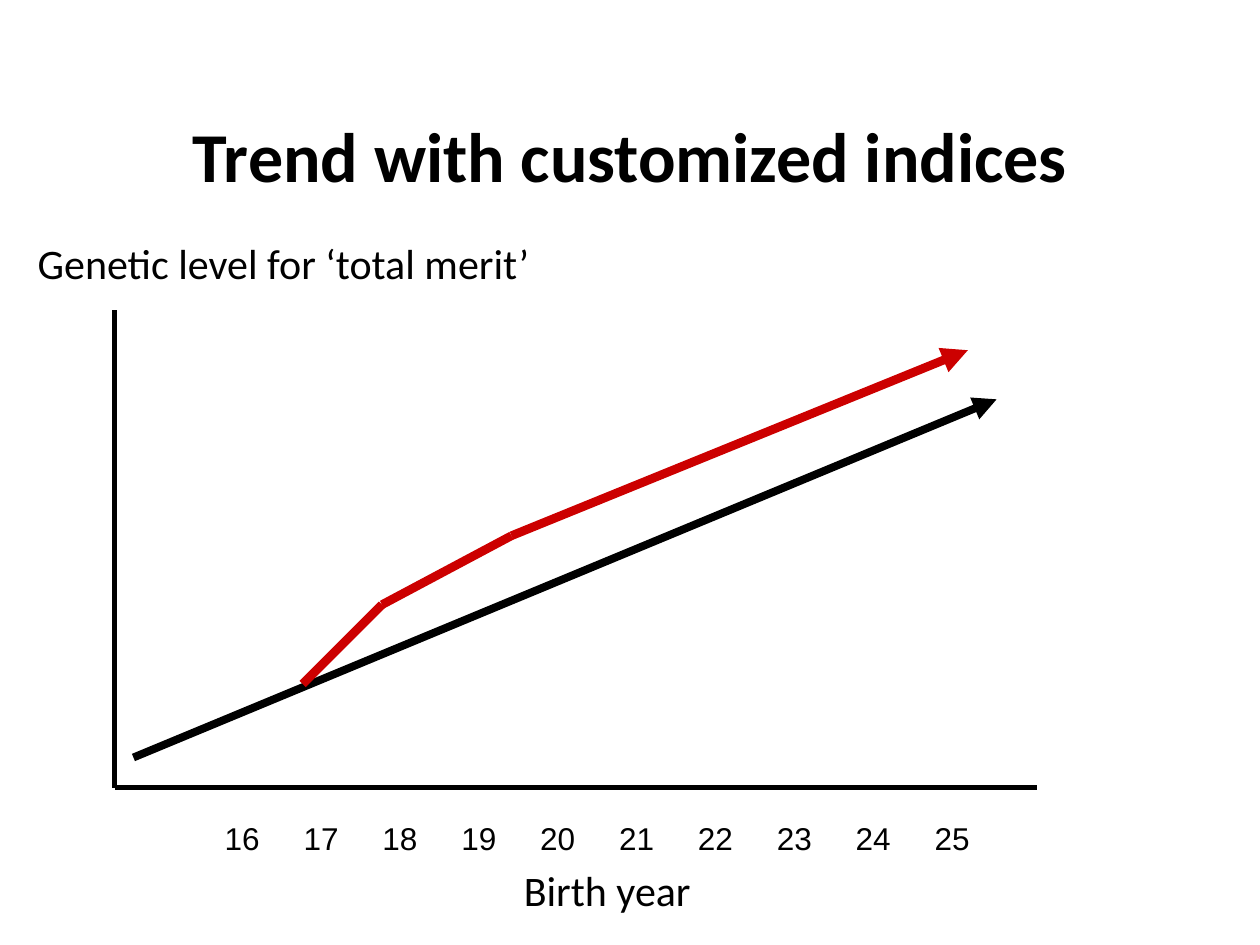
from itertools import pairwise

from lxml.etree import SubElement
from pptx import Presentation
from pptx.dml.color import RGBColor
from pptx.enum.shapes import MSO_CONNECTOR
from pptx.enum.text import MSO_ANCHOR, PP_ALIGN
from pptx.oxml.ns import qn
from pptx.util import Cm, Pt

BLACK = "000000"
RED = "CC0000"
YEAR_STEP = 1.59


def color(value):
    return RGBColor.from_string(value)


class TrendPage:
    font_name = "Calibri"
    label_size = 24

    def __init__(self, deck):
        self.page = deck.slides.add_slide(deck.slide_layouts[6])

    def text(self, words, left, top, width, height, size=label_size,
             font=font_name, bold=False, align=PP_ALIGN.LEFT, wrap=False,
             inset=0.25, tabs=()):
        box = self.page.shapes.add_textbox(Cm(left), Cm(top), Cm(width), Cm(height))
        frame = box.text_frame
        frame.word_wrap = wrap
        frame.vertical_anchor = MSO_ANCHOR.MIDDLE
        frame.margin_left = Cm(inset)
        para = frame.paragraphs[0]
        para.text = words
        para.alignment = align
        if tabs:
            tab_list = SubElement(para._p.get_or_add_pPr(), qn("a:tabLst"))
            for position in tabs:
                SubElement(tab_list, qn("a:tab"), pos=str(Cm(position)), algn="l")
        para.font.name = font
        para.font.size = Pt(size)
        para.font.bold = bold
        para.font.color.rgb = color(BLACK)

    def line(self, start, end, width, shade=BLACK, arrow=False, shapes=None):
        shapes = shapes or self.page.shapes
        points = [Cm(value) for value in (*start, *end)]
        connector = shapes.add_connector(MSO_CONNECTOR.STRAIGHT, *points)
        connector.line.width = Pt(width)
        connector.line.color.rgb = color(shade)
        if arrow:
            SubElement(connector.line._get_or_add_ln(), qn("a:tailEnd"), type="triangle")
        SubElement(connector._element.spPr, qn("a:effectLst"))

    def path_line(self, points, width, shade):
        group = self.page.shapes.add_group_shape()
        for start, end in pairwise(points):
            self.line(start, end, width, shade, end == points[-1], group.shapes)


def main():
    deck = Presentation()
    deck.slide_width, deck.slide_height = Cm(25.4), Cm(19.05)
    trend = TrendPage(deck)

    trend.text("Trend with customized indices", 1.27, 1.73, 22.86, 2.79,
               size=40, bold=True, align=PP_ALIGN.CENTER, wrap=True)

    origin = (2.31, 15.88)
    trend.line((2.31, 6.25), origin, 3)
    trend.line((20.9, 15.88), origin, 3)

    years = [str(year) for year in range(16, 26)]
    trend.text("\t".join(years), 4.09, 16.38, 21.01, 1.02, size=18, font="Arial",
               wrap=True, inset=0.44,
               tabs=[YEAR_STEP * step for step in range(1, len(years))])

    trend.line((2.69, 15.27), (20.09, 8.05), 4.5, arrow=True)
    trend.text("Birth year", 10.31, 17.3, 3.91, 1.27)
    trend.path_line([(6.1, 13.79), (7.7, 12.19), (10.31, 10.8), (19.51, 7.06)], 5, RED)
    trend.text("Genetic level for ‘total merit’", 0.51, 4.67, 10.64, 1.27)

    deck.save("out.pptx")


if __name__ == "__main__":
    main()
